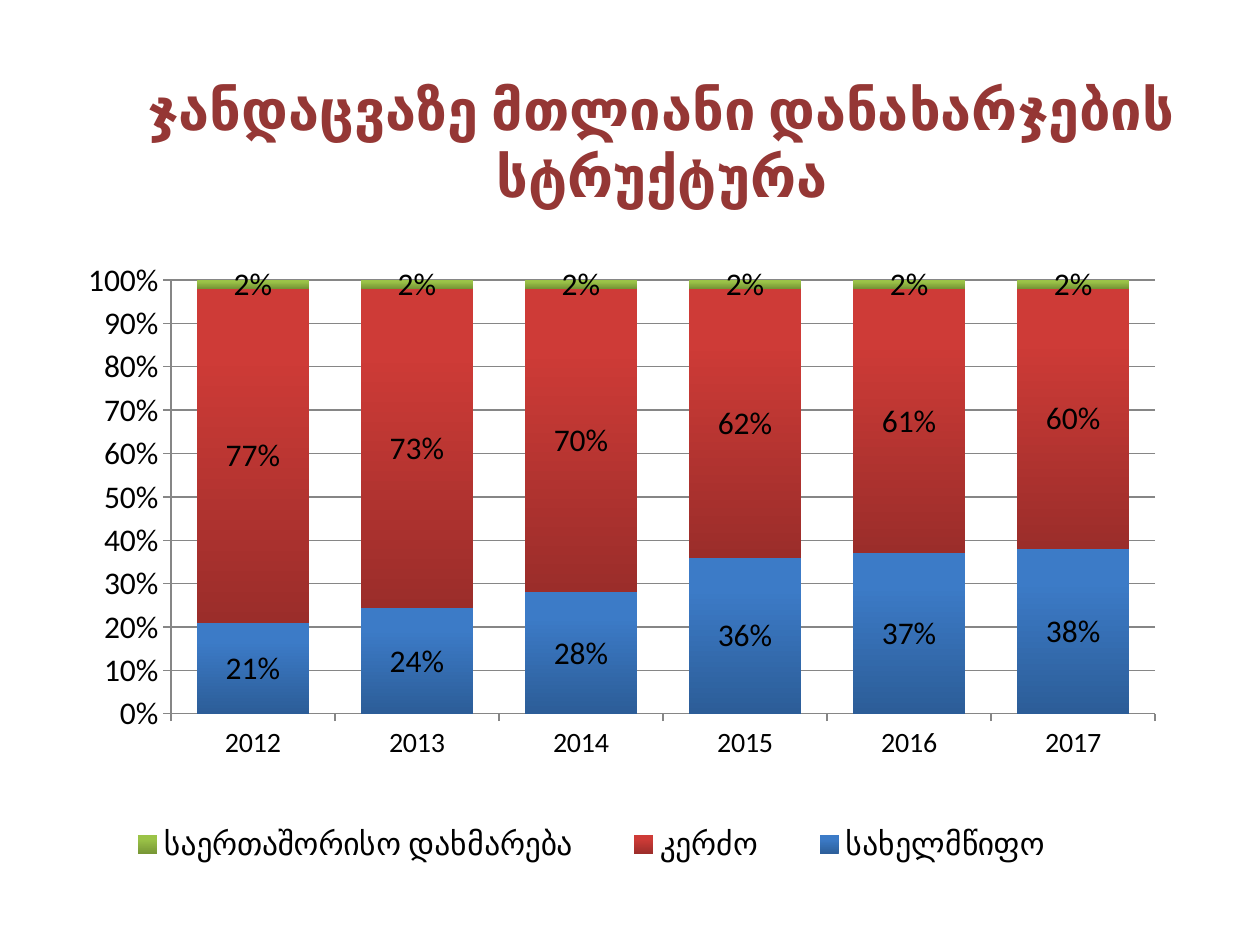
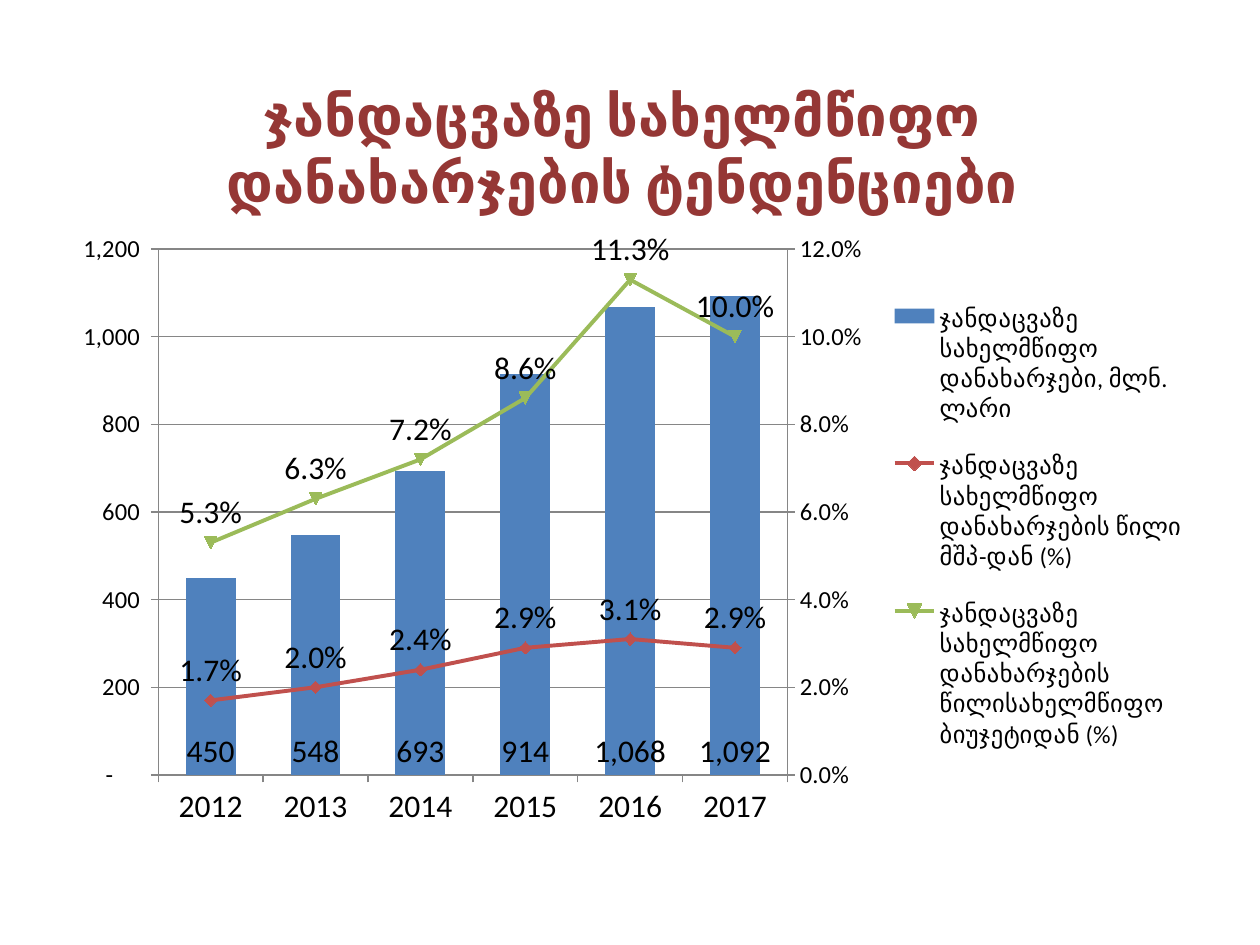
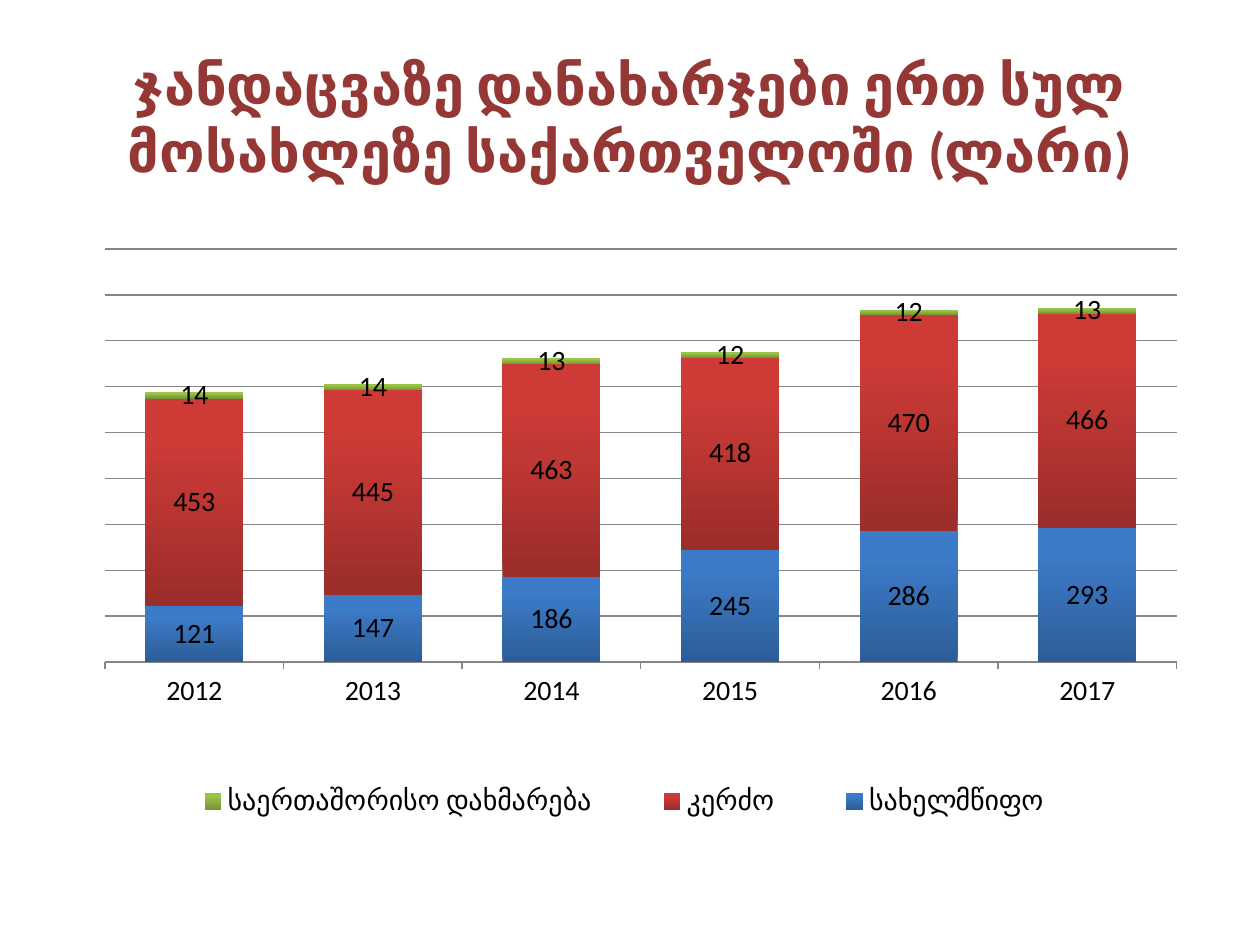
from pptx import Presentation
from pptx.chart.data import CategoryChartData
from pptx.dml.color import RGBColor
from pptx.enum.chart import XL_CHART_TYPE, XL_LABEL_POSITION, XL_LEGEND_POSITION, XL_TICK_MARK
from pptx.enum.text import MSO_ANCHOR, MSO_AUTO_SIZE, PP_ALIGN
from pptx.oxml import parse_xml
from pptx.oxml.ns import nsdecls
from pptx.util import Pt

CLUSTERED = XL_CHART_TYPE.COLUMN_CLUSTERED
STACKED = XL_CHART_TYPE.COLUMN_STACKED
STACKED_100 = XL_CHART_TYPE.COLUMN_STACKED_100
ABOVE, INSIDE_BASE = XL_LABEL_POSITION.ABOVE, XL_LABEL_POSITION.INSIDE_BASE
LEGEND_RIGHT = XL_LEGEND_POSITION.RIGHT
TICK_OUT = XL_TICK_MARK.OUTSIDE
MIDDLE, CENTER, NO_FIT = MSO_ANCHOR.MIDDLE, PP_ALIGN.CENTER, MSO_AUTO_SIZE.NONE

PX = 914400 / 126
TITLE_ONLY = 5
FONT = "Calibri"
COLORS = {
    "title": "953735", "text": "000000", "axis": "868686",
    "state": "4F81BD", "gdp_share": "C0504D", "budget_share": "9BBB59",
}
GRADIENTS = [("2C5D98", "3C7BC7"), ("9B2D2A", "CE3B37"), ("769535", "9BC348")]
YEARS = ["2012", "2013", "2014", "2015", "2016", "2017"]
AMOUNT = '_(* #,##0_);_(* \\(#,##0\\);_(* "-"??_);_('
STATE, PRIVATE, AID = "სახელმწიფო", "კერძო", "საერთაშორისო დახმარება"


def px(length):
    return round(length * PX)


def rgb(name):
    return RGBColor.from_string(COLORS[name])


def style_font(font, size, color="text", bold=False):
    font.name = FONT
    font.size = Pt(size)
    font.bold = bold
    font.color.rgb = rgb(color)


def write_text(shape, text, size, color, bold=False, align=CENTER, anchor=MIDDLE):
    frame = shape.text_frame
    frame.word_wrap = True
    frame.auto_size = NO_FIT
    frame.vertical_anchor = anchor
    paragraph = frame.paragraphs[0]
    paragraph.alignment = align
    run = paragraph.add_run()
    run.text = text
    style_font(run.font, size, color, bold)


def titled_slide(prs, title, box):
    slide = prs.slides.add_slide(prs.slide_layouts[TITLE_ONLY])
    heading = slide.shapes.title
    heading.left, heading.top, heading.width, heading.height = map(px, box)
    write_text(heading, title, 32, "title", bold=True)
    return slide


def set_layout(parent, box, index, inner=False):
    for old in parent.xpath("c:layout"):
        parent.remove(old)
    target = '<c:layoutTarget val="inner"/>' if inner else ""
    sizes = "".join(f'<c:{tag} val="{value}"/>' for tag, value in zip("xywh", box))
    parent.insert(index, parse_xml(
        f'<c:layout {nsdecls("c")}><c:manualLayout>{target}'
        f'<c:xMode val="edge"/><c:yMode val="edge"/>{sizes}</c:manualLayout></c:layout>'))


def style_axis(axis, size):
    axis.major_tick_mark = TICK_OUT
    axis.format.line.color.rgb = rgb("axis")
    axis.format.line.width = Pt(0.75)
    style_font(axis.tick_labels.font, size)


def add_column_chart(slide, box, kind, series, plot_box, legend_box, gap,
                     axis_format, axis_max, axis_step, sizes):
    data = CategoryChartData()
    data.categories = YEARS
    for name, values, number_format in series:
        data.add_series(name, values, number_format)
    chart = slide.shapes.add_chart(kind, *map(px, box), data).chart
    chart.has_title = False
    style_font(chart.font, 18)
    chart.plots[0].gap_width = gap
    chart.plots[0].vary_by_categories = False
    style_axis(chart.category_axis, sizes["category"])
    amounts = chart.value_axis
    style_axis(amounts, sizes["value"])
    amounts.minimum_scale = 0
    amounts.maximum_scale = axis_max
    amounts.major_unit = axis_step
    amounts.tick_labels.number_format = axis_format
    amounts.tick_labels.number_format_is_linked = False
    amounts.has_major_gridlines = True
    amounts.major_gridlines.format.line.color.rgb = rgb("axis")
    amounts.major_gridlines.format.line.width = Pt(0.75)
    chart.has_legend = True
    chart.legend.position = LEGEND_RIGHT
    chart.legend.include_in_layout = False
    style_font(chart.legend.font, sizes["legend"])
    set_layout(chart.element.xpath("c:chart/c:plotArea")[0], plot_box, 0, inner=True)
    set_layout(chart.element.xpath("c:chart/c:legend")[0], legend_box, 1)
    return chart


def label_series(series, number_format, size, position=None):
    labels = series.data_labels
    labels.show_value = True
    labels.number_format = number_format
    labels.number_format_is_linked = False
    style_font(labels.font, size)
    if position is not None:
        labels.position = position


def fill_gradient(fill, dark, light):
    fill.gradient()
    fill.gradient_angle = 90
    for stop, color, position in zip(fill.gradient_stops, (dark, light), (0, 0.8)):
        stop.color.rgb = RGBColor.from_string(color)
        stop.position = position


def stacked_slide(prs, title, title_box, label_format, label_size, values, show_axis=True, **options):
    slide = titled_slide(prs, title, title_box)
    series = [(name, row, label_format) for name, row in zip((STATE, PRIVATE, AID), values)]
    chart = add_column_chart(slide, series=series, axis_format=label_format, **options)
    chart.plots[0].overlap = 100
    chart.value_axis.visible = show_axis
    for source, gradient in zip(chart.plots[0].series, GRADIENTS):
        fill_gradient(source.format.fill, *gradient)
        label_series(source, label_format, label_size)


def move_shares_to_lines(chart):
    bars = chart.element.xpath(".//c:barChart")[0]
    lines = parse_xml(
        f'<c:lineChart {nsdecls("c")}><c:grouping val="standard"/><c:varyColors val="0"/>'
        '<c:marker val="1"/><c:axId val="501"/><c:axId val="502"/></c:lineChart>')
    for offset, share in enumerate(bars.xpath("c:ser")[1:]):
        for flag in share.xpath("c:invertIfNegative"):
            share.remove(flag)
        lines.insert(2 + offset, share)
    bars.addnext(lines)
    share_axis = parse_xml(
        f'<c:valAx {nsdecls("c", "a")}><c:axId val="502"/>'
        '<c:scaling><c:orientation val="minMax"/><c:max val="0.12"/><c:min val="0"/></c:scaling>'
        '<c:delete val="0"/><c:axPos val="r"/><c:numFmt formatCode="0.0%" sourceLinked="0"/>'
        '<c:majorTickMark val="out"/><c:minorTickMark val="none"/><c:tickLblPos val="nextTo"/>'
        f'<c:spPr><a:ln w="9525"><a:solidFill><a:srgbClr val="{COLORS["axis"]}"/></a:solidFill></a:ln></c:spPr>'
        '<c:txPr><a:bodyPr/><a:p><a:pPr><a:defRPr sz="1400"/></a:pPr></a:p></c:txPr>'
        '<c:crossAx val="501"/><c:crosses val="max"/><c:majorUnit val="0.02"/></c:valAx>')
    hidden_years = parse_xml(
        f'<c:catAx {nsdecls("c")}><c:axId val="501"/>'
        '<c:scaling><c:orientation val="minMax"/></c:scaling><c:delete val="1"/>'
        '<c:axPos val="b"/><c:crossAx val="502"/><c:crosses val="autoZero"/></c:catAx>')
    amount_axis = chart.element.xpath(".//c:valAx")[0]
    amount_axis.addnext(share_axis)
    share_axis.addnext(hidden_years)


def combo_slide(prs, title, title_box, series, **options):
    slide = titled_slide(prs, title, title_box)
    chart = add_column_chart(slide, kind=CLUSTERED, series=series, axis_format=AMOUNT, **options)
    move_shares_to_lines(chart)
    columns, lines = chart.plots
    spending = columns.series[0]
    spending.format.fill.solid()
    spending.format.fill.fore_color.rgb = rgb("state")
    label_series(spending, AMOUNT, 18, INSIDE_BASE)
    for share, color in zip(lines.series, ("gdp_share", "budget_share")):
        share.smooth = False
        share.format.line.color.rgb = rgb(color)
        share.format.line.width = Pt(2.25)
        share.marker.size = 7
        share.marker.format.fill.solid()
        share.marker.format.fill.fore_color.rgb = rgb(color)
        share.marker.format.line.color.rgb = rgb(color)
        label_series(share, "0.0%", 18, ABOVE)


def main():
    prs = Presentation()
    prs.slide_width, prs.slide_height = px(1260), px(945)
    stacked_slide(
        prs, "ჯანდაცვაზე მთლიანი დანახარჯების სტრუქტურა", (95, 63, 1134, 158),
        label_format="0%", label_size=18,
        values=[(0.21, 0.24, 0.28, 0.36, 0.37, 0.38),
                (0.77, 0.73, 0.70, 0.62, 0.61, 0.60),
                (0.02, 0.02, 0.02, 0.02, 0.02, 0.02)],
        box=(53, 252, 1134, 624), kind=STACKED_100, gap=46,
        plot_box=(0.104, 0.045, 0.868, 0.695), legend_box=(0.03, 0.91, 0.89, 0.08),
        axis_max=1, axis_step=0.1, sizes={"category": 16, "value": 18, "legend": 18})
    combo_slide(
        prs, "ჯანდაცვაზე სახელმწიფო დანახარჯების ტენდენციები", (53, 69, 1139, 158),
        series=[
            ("ჯანდაცვაზე სახელმწიფო დანახარჯები, მლნ. ლარი",
             (450, 548, 693, 914, 1068, 1092), AMOUNT),
            ("ჯანდაცვაზე სახელმწიფო დანახარჯების წილი მშპ-დან (%)",
             (0.017, 0.020, 0.024, 0.029, 0.031, 0.029), "0.0%"),
            ("ჯანდაცვაზე სახელმწიფო დანახარჯების წილისახელმწიფო ბიუჯეტიდან (%)",
             (0.053, 0.063, 0.072, 0.086, 0.113, 0.100), "0.0%")],
        box=(63, 221, 1134, 624), gap=110,
        plot_box=(0.084, 0.045, 0.555, 0.843), legend_box=(0.73, 0.09, 0.26, 0.8),
        axis_max=1200, axis_step=200, sizes={"category": 18, "value": 14, "legend": 14})
    stacked_slide(
        prs, "ჯანდაცვაზე დანახარჯები ერთ სულ მოსახლეზე საქართველოში (ლარი)", (63, 38, 1134, 158),
        label_format=AMOUNT, label_size=16, show_axis=False,
        values=[(121, 147, 186, 245, 286, 293),
                (453, 445, 463, 418, 470, 466),
                (14, 14, 13, 12, 12, 13)],
        box=(63, 221, 1134, 624), kind=STACKED, gap=82,
        plot_box=(0.037, 0.045, 0.945, 0.662), legend_box=(0.07, 0.89, 0.85, 0.08),
        axis_max=900, axis_step=100, sizes={"category": 16, "value": 16, "legend": 16})
    prs.save("out.pptx")


if __name__ == "__main__":
    main()
